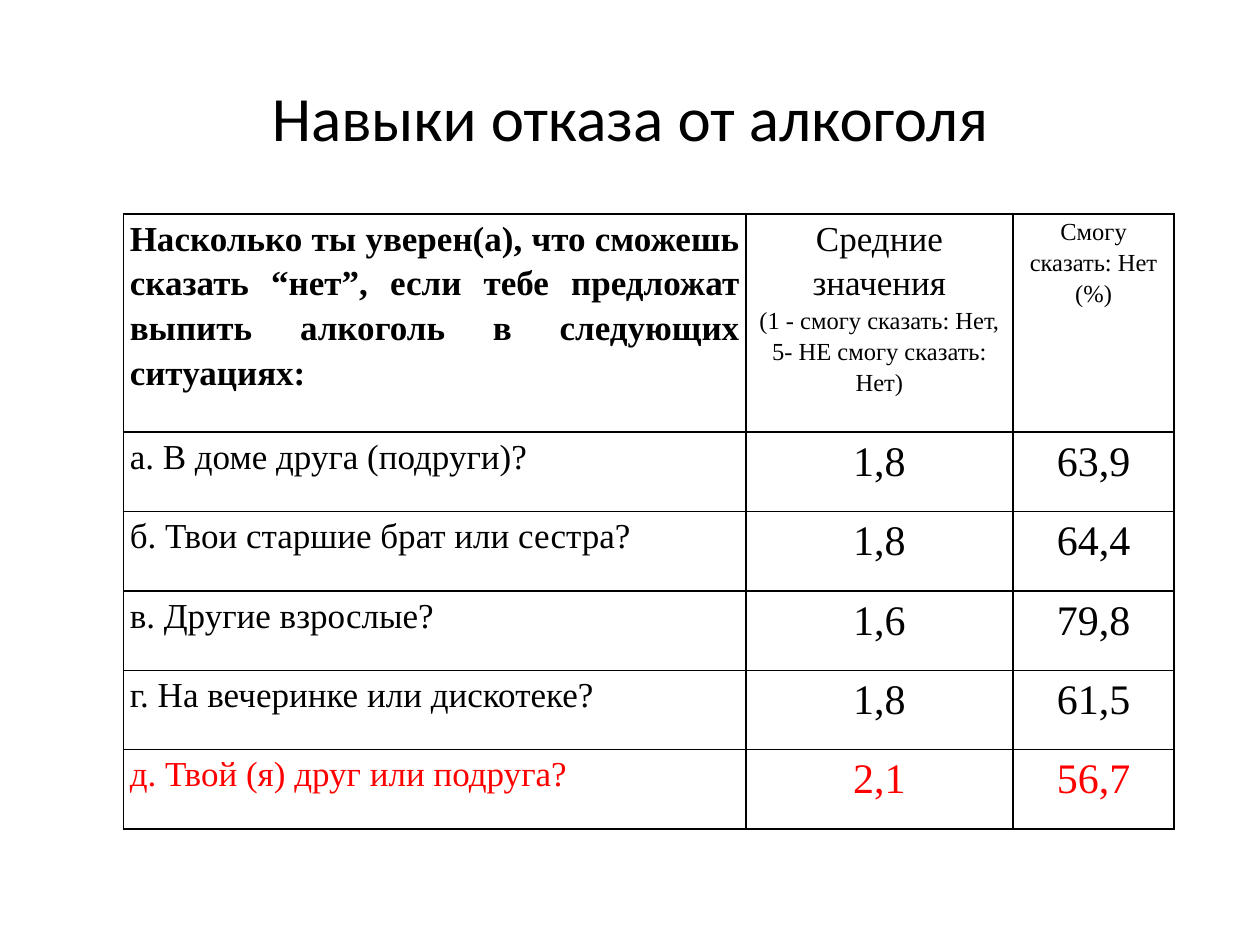
import pptx
import pptx.util
import pptx.dml.color
import pptx.enum.text
import pptx.oxml
import pptx.oxml.ns

Inches = pptx.util.Inches
Pt = pptx.util.Pt
ALIGN = pptx.enum.text.PP_ALIGN
ANCHOR = pptx.enum.text.MSO_ANCHOR

COLORS = {"ink": "000000", "alert": "FF0000"}
SERIF = "Times New Roman"
COLS = [4.94, 2.12, 1.28]
HEAD_H, ROW_H = 1.73, 0.63
HEADS = [
    [("Насколько ты уверен(а), что сможешь сказать “нет”, "
      "если тебе предложат выпить алкоголь в следующих ситуациях:", 20)],
    [("Средние значения", 20),
     ("(1 - смогу сказать: Нет,", 14),
     ("5- НЕ смогу сказать: Нет)", 14)],
    [("Смогу сказать: Нет", 14), ("(%)", 14)],
]
ROWS = [
    ("а. В доме друга (подруги)?", "1,8", "63,9", "ink"),
    ("б. Твои старшие брат или сестра?", "1,8", "64,4", "ink"),
    ("в. Другие взрослые?", "1,6", "79,8", "ink"),
    ("г. На вечеринке или дискотеке?", "1,8", "61,5", "ink"),
    ("д. Твой (я) друг или подруга?", "2,1", "56,7", "alert"),
]


def style(para, text, size, face, color, align, bold=False):
    """Fill a paragraph and set its font."""
    para.text = text
    para.alignment = align
    font = para.font
    font.size, font.name, font.bold = Pt(size), face, bold
    font.color.rgb = pptx.dml.color.RGBColor.from_string(COLORS[color])


def add_title(slide, text):
    """Add the centred slide title."""
    box = slide.shapes.add_textbox(Inches(0.5), Inches(0.3), Inches(9), Inches(1.25))
    frame = box.text_frame
    frame.word_wrap = True
    frame.vertical_anchor = ANCHOR.MIDDLE
    style(frame.paragraphs[0], text, 36, "Calibri", "ink", ALIGN.CENTER)


def add_edges(cell):
    """Draw a thin line on all four sides of a cell."""
    props = cell._tc.get_or_add_tcPr()
    space = pptx.oxml.ns.nsdecls("a")
    for spot, side in enumerate(("lnL", "lnR", "lnT", "lnB")):
        props.insert(spot, pptx.oxml.parse_xml(
            f'<a:{side} {space} w="{Pt(1)}"><a:solidFill>'
            f'<a:srgbClr val="{COLORS["ink"]}"/></a:solidFill></a:{side}>'))


def fill_cell(cell, lines, color, first, bold=False):
    """Write sized lines of text into a bordered cell."""
    cell.margin_left = cell.margin_right = Inches(0.05)
    cell.margin_top = cell.margin_bottom = 0
    cell.fill.background()
    add_edges(cell)
    frame = cell.text_frame
    align = ALIGN.JUSTIFY if first else ALIGN.CENTER
    for spot, (text, size) in enumerate(lines):
        para = frame.add_paragraph() if spot else frame.paragraphs[0]
        style(para, text, size, SERIF, color, align, bold)
        para.line_spacing = 1.15


def add_grid(slide):
    """Add the table of answers."""
    count = len(ROWS) + 1
    shape = slide.shapes.add_table(
        count, len(COLS), Inches(0.98), Inches(1.7),
        Inches(sum(COLS)), Inches(HEAD_H + ROW_H * len(ROWS)))
    table = shape.table
    table.first_row = table.horz_banding = False
    for col, width in zip(table.columns, COLS):
        col.width = Inches(width)
    for spot, row in enumerate(table.rows):
        row.height = Inches(ROW_H if spot else HEAD_H)
    for col, lines in enumerate(HEADS):
        fill_cell(table.cell(0, col), lines, "ink", col == 0, col == 0)
    for spot, (*texts, color) in enumerate(ROWS, 1):
        for col, text in enumerate(texts):
            size = 24 if col else 20
            fill_cell(table.cell(spot, col), [(text, size)], color, col == 0)


def main():
    """Build and save the slide."""
    deck = pptx.Presentation()
    deck.slide_width, deck.slide_height = Inches(10), Inches(7.5)
    slide = deck.slides.add_slide(deck.slide_layouts[6])
    add_title(slide, "Навыки отказа от алкоголя")
    add_grid(slide)
    deck.save("out.pptx")


if __name__ == "__main__":
    main()
